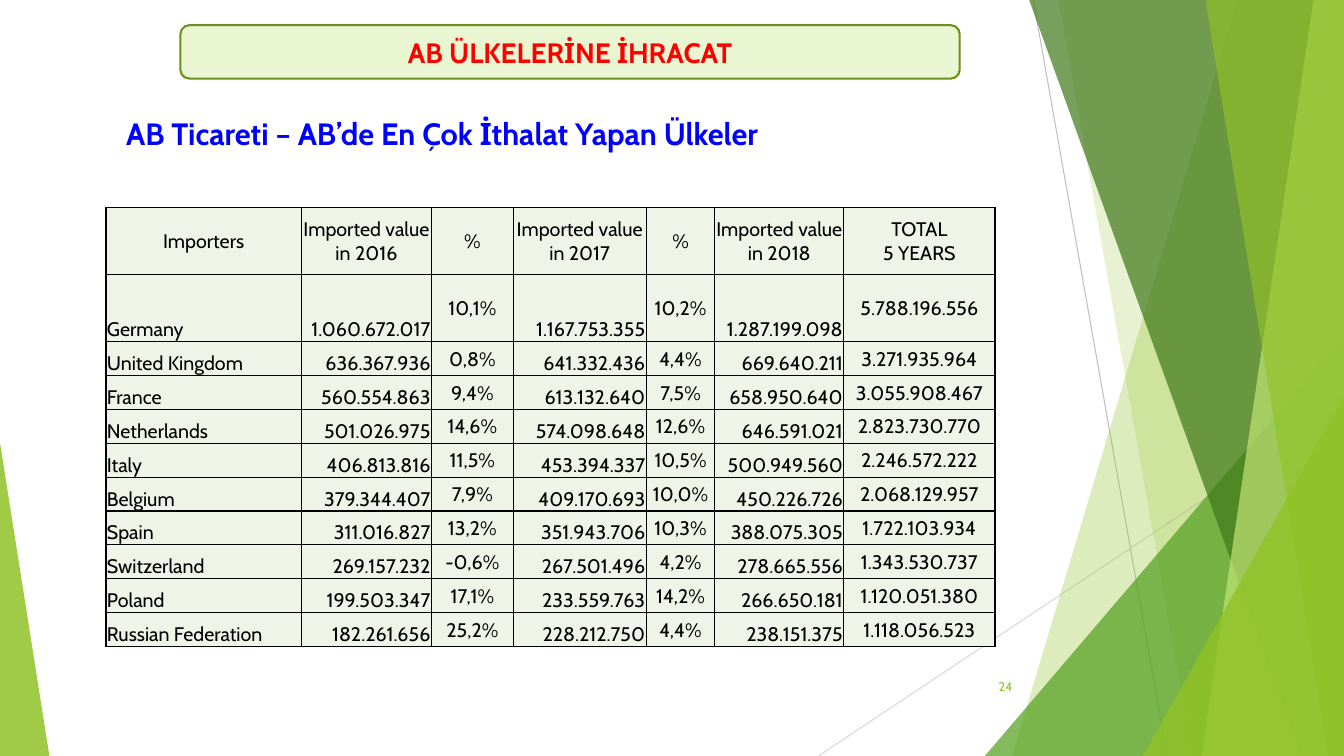
import pptx
import pptx.util
import pptx.dml.color
import pptx.enum.shapes
import pptx.enum.text
import pptx.oxml
import pptx.oxml.ns
from dataclasses import dataclass
from lxml import etree

ALIGN = pptx.enum.text.PP_ALIGN
ANCHOR = pptx.enum.text.MSO_ANCHOR
SHAPE = pptx.enum.shapes.MSO_SHAPE


@dataclass(frozen=True)
class Theme:
    font: str = "Cabin"
    black: str = "000000"
    red: str = "FF0000"
    blue: str = "0000FF"
    lime: str = "90C226"
    pale_lime: str = "C0E474"
    green: str = "54A021"
    forest: str = "3F7819"
    banner_fill: str = "EAF6D1"
    banner_line: str = "6B901C"
    cell_fill: str = "EEF4E8"
    dark_grey: str = "BFBFBF"
    light_grey: str = "D9D9D9"
    title_size: int = 22
    banner_size: int = 20
    table_size: int = 14
    number_size: int = 9


THEME = Theme()
SLIDE_WIDTH = pptx.util.Inches(40 / 3)
SLIDE_HEIGHT = pptx.util.Inches(7.5)

COLUMN_WIDTHS = [14.55, 9.68, 6.08, 9.9, 5.1, 9.6, 11.25]
TALL_ROW, ROW = 8.87, 4.48
HEADER = ["Importers", "Imported value in 2016", "%", "Imported value in 2017",
          "%", "Imported value in 2018", "TOTAL\n5 YEARS"]
IMPORTERS = [
    ["Germany", "1.060.672.017", "10,1%", "1.167.753.355", "10,2%", "1.287.199.098", "5.788.196.556"],
    ["United Kingdom", "636.367.936", "0,8%", "641.332.436", "4,4%", "669.640.211", "3.271.935.964"],
    ["France", "560.554.863", "9,4%", "613.132.640", "7,5%", "658.950.640", "3.055.908.467"],
    ["Netherlands", "501.026.975", "14,6%", "574.098.648", "12,6%", "646.591.021", "2.823.730.770"],
    ["Italy", "406.813.816", "11,5%", "453.394.337", "10,5%", "500.949.560", "2.246.572.222"],
    ["Belgium", "379.344.407", "7,9%", "409.170.693", "10,0%", "450.226.726", "2.068.129.957"],
    ["Spain", "311.016.827", "13,2%", "351.943.706", "10,3%", "388.075.305", "1.722.103.934"],
    ["Switzerland", "269.157.232", "-0,6%", "267.501.496", "4,2%", "278.665.556", "1.343.530.737"],
    ["Poland", "199.503.347", "17,1%", "233.559.763", "14,2%", "266.650.181", "1.120.051.380"],
    ["Russian Federation", "182.261.656", "25,2%", "228.212.750", "4,4%", "238.151.375", "1.118.056.523"],
]
LABEL_STYLE = (ALIGN.LEFT, ANCHOR.BOTTOM)
VALUE_STYLE = (ALIGN.RIGHT, ANCHOR.BOTTOM)
CENTRE_STYLE = (ALIGN.CENTER, ANCHOR.MIDDLE)
COLUMN_STYLES = [LABEL_STYLE, VALUE_STYLE, CENTRE_STYLE, VALUE_STYLE,
                 CENTRE_STYLE, VALUE_STYLE, CENTRE_STYLE]


def across(percent):
    """Share of the slide's width."""
    return round(SLIDE_WIDTH * percent / 100)


def down(percent):
    """Share of the slide's height."""
    return round(SLIDE_HEIGHT * percent / 100)


def box(left, top, width, height):
    return across(left), down(top), across(width), down(height)


def rgb(color):
    return pptx.dml.color.RGBColor.from_string(color)


def write(frame, text, size, color, bold=False, align=ALIGN.LEFT):
    frame.word_wrap = True
    paragraph = frame.paragraphs[0]
    paragraph.text = text.replace("\n", "\v")
    paragraph.alignment = align
    for run in paragraph.runs:
        run.font.name = THEME.font
        run.font.size = pptx.util.Pt(size)
        run.font.bold = bold
        run.font.color.rgb = rgb(color)


def paint(shape, color, opacity=100):
    shape.shadow.inherit = False
    shape.line.fill.background()
    shape.fill.solid()
    shape.fill.fore_color.rgb = rgb(color)
    if opacity < 100:
        fill_color = shape.fill._xPr.find(".//" + pptx.oxml.ns.qn("a:srgbClr"))
        etree.SubElement(fill_color, pptx.oxml.ns.qn("a:alpha"), val=str(opacity * 1000))


def add_line(slide, start, end, color):
    line = slide.shapes.add_connector(
        pptx.enum.shapes.MSO_CONNECTOR.STRAIGHT,
        across(start[0]), down(start[1]), across(end[0]), down(end[1]))
    line.line.color.rgb = rgb(color)
    line.line.width = pptx.util.Pt(0.75)
    etree.SubElement(line._element.spPr, pptx.oxml.ns.qn("a:effectLst"))


def add_band(slide, top_left, bottom_left, color, opacity):
    """Full-height band with a slanted left side, reaching the right edge."""
    builder = slide.shapes.build_freeform(across(top_left), 0)
    builder.add_line_segments([(across(100), 0), (across(100), down(100)),
                               (across(bottom_left), down(100))])
    paint(builder.convert_to_shape(), color, opacity)


def add_triangle(slide, place, apex, color, opacity):
    triangle = slide.shapes.add_shape(SHAPE.ISOSCELES_TRIANGLE, *box(*place))
    triangle.adjustments[0] = apex
    paint(triangle, color, opacity)


def add_decoration(slide):
    add_line(slide, (76.88, 0), (86.85, 100), THEME.dark_grey)
    add_line(slide, (100, 53.73), (60.9, 100), THEME.light_grey)
    add_band(slide, 92.1, 75.3, THEME.lime, 30)
    add_band(slide, 78.75, 88.73, THEME.lime, 20)
    add_triangle(slide, (73.28, 44.4, 26.72, 55.6), 1, THEME.green, 72)
    add_band(slide, 76.58, 96.83, THEME.forest, 70)
    add_band(slide, 97.73, 89.4, THEME.pale_lime, 70)
    add_band(slide, 89.7, 98.85, THEME.lime, 65)
    add_triangle(slide, (85.05, 52.4, 14.95, 47.6), 1, THEME.lime, 80)
    add_triangle(slide, (0, 58.53, 3.68, 41.47), 0, THEME.lime, 85)


def place_title(slide, text):
    title = slide.shapes.title
    title.left, title.top, title.width, title.height = box(8.63, 14.53, 60.53, 6.27)
    frame = title.text_frame
    frame.auto_size = pptx.enum.text.MSO_AUTO_SIZE.NONE
    frame.vertical_anchor = ANCHOR.TOP
    write(frame, text, THEME.title_size, THEME.blue, bold=True, align=ALIGN.JUSTIFY)


def add_banner(slide, text):
    banner = slide.shapes.add_shape(SHAPE.ROUNDED_RECTANGLE, *box(13.43, 3.33, 57.98, 7.07))
    paint(banner, THEME.banner_fill)
    banner.line.color.rgb = rgb(THEME.banner_line)
    banner.line.width = pptx.util.Pt(1.5)
    banner.text_frame.vertical_anchor = ANCHOR.MIDDLE
    write(banner.text_frame, text, THEME.banner_size, THEME.red, bold=True, align=ALIGN.CENTER)


def add_page_number(slide, text):
    frame = slide.shapes.add_textbox(*box(70.43, 88.13, 5.63, 5.33)).text_frame
    frame.vertical_anchor = ANCHOR.MIDDLE
    write(frame, text, THEME.number_size, THEME.lime, align=ALIGN.RIGHT)


def format_cell(cell, text, align, anchor):
    cell.margin_left = cell.margin_right = cell.margin_top = pptx.util.Inches(0.01)
    cell.margin_bottom = 0
    cell.vertical_anchor = anchor
    properties = cell._tc.get_or_add_tcPr()
    for side in ("lnL", "lnR", "lnT", "lnB"):
        properties.append(pptx.oxml.parse_xml(
            f'<a:{side} {pptx.oxml.ns.nsdecls("a")} w="{pptx.util.Pt(1)}"><a:solidFill>'
            f'<a:srgbClr val="{THEME.black}"/></a:solidFill></a:{side}>'))
    cell.fill.solid()
    cell.fill.fore_color.rgb = rgb(THEME.cell_fill)
    write(cell.text_frame, text, THEME.table_size, THEME.black, align=align)


def add_importers_table(slide):
    rows = [HEADER] + IMPORTERS
    row_heights = [TALL_ROW] * 2 + [ROW] * (len(rows) - 2)
    place = box(7.88, 27.47, sum(COLUMN_WIDTHS), sum(row_heights))
    table = slide.shapes.add_table(len(rows), len(HEADER), *place).table
    table.first_row = table.horz_banding = False
    for column, width in zip(table.columns, COLUMN_WIDTHS):
        column.width = across(width)
    for row_index, (values, height) in enumerate(zip(rows, row_heights)):
        table.rows[row_index].height = down(height)
        styles = COLUMN_STYLES if row_index else [CENTRE_STYLE] * len(HEADER)
        for column_index, (text, style) in enumerate(zip(values, styles)):
            format_cell(table.cell(row_index, column_index), text, *style)


def main():
    presentation = pptx.Presentation()
    presentation.slide_width = SLIDE_WIDTH
    presentation.slide_height = SLIDE_HEIGHT
    slide = presentation.slides.add_slide(presentation.slide_layouts.get_by_name("Title Only"))
    add_decoration(slide)
    add_page_number(slide, "24")
    place_title(slide, "AB Ticareti – AB’de En Çok İthalat Yapan Ülkeler")
    add_importers_table(slide)
    add_banner(slide, "AB ÜLKELERİNE İHRACAT")
    presentation.save("out.pptx")


if __name__ == "__main__":
    main()
